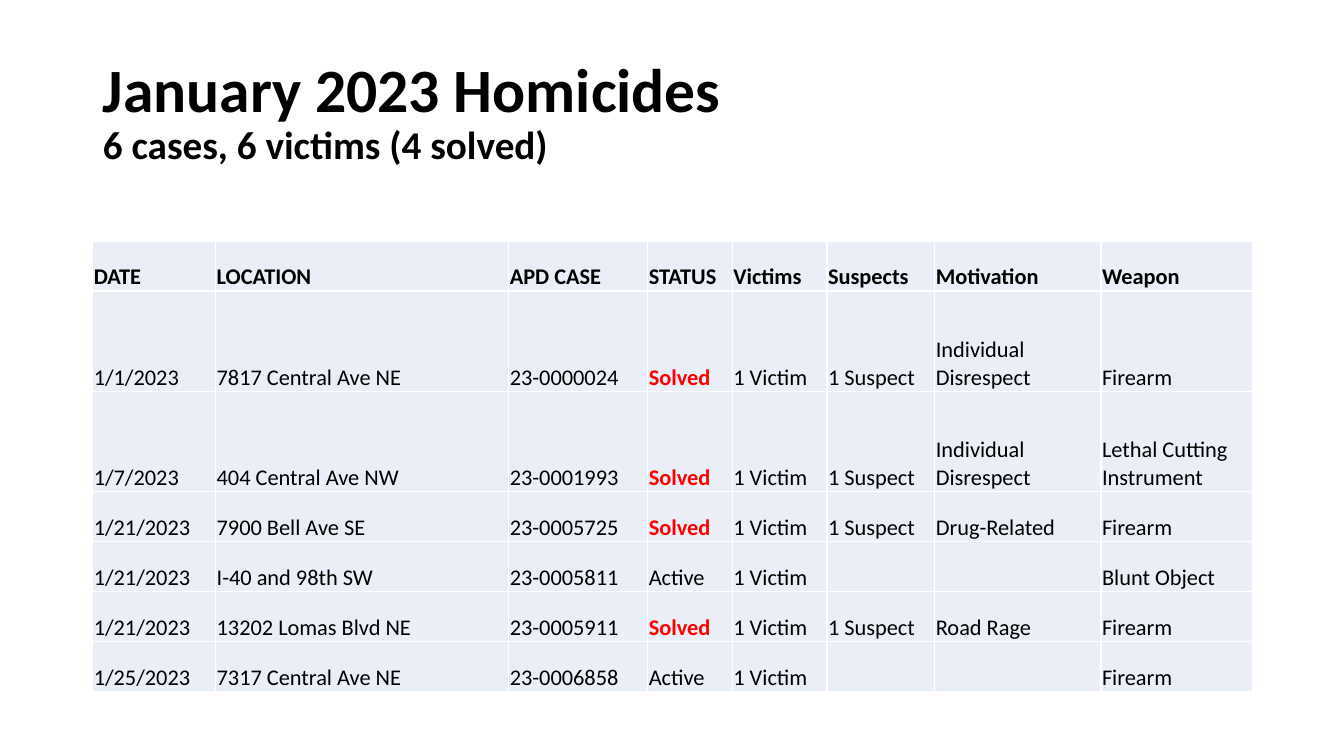
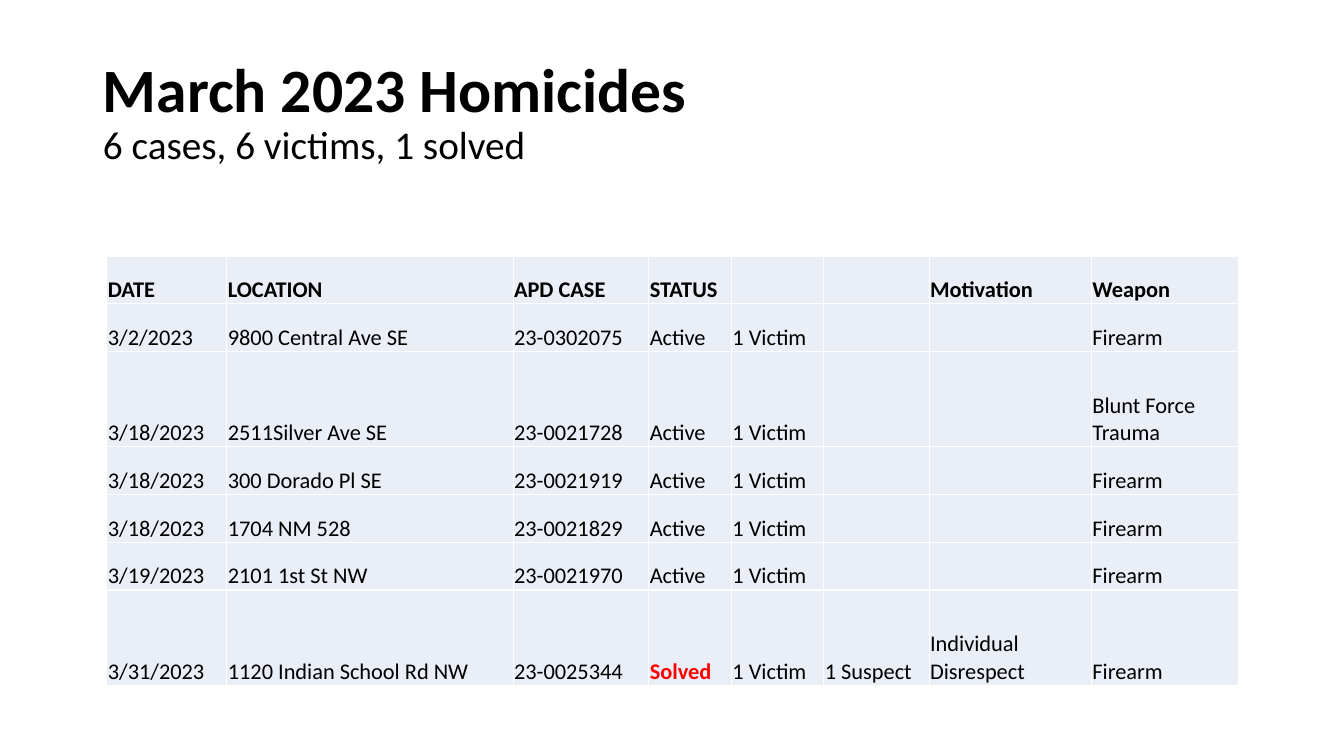
from lxml import etree
from pptx import Presentation
from pptx.dml.color import RGBColor
from pptx.enum.text import MSO_ANCHOR, MSO_AUTO_SIZE, PP_ALIGN
from pptx.oxml.ns import qn
from pptx.util import Inches, Pt

FONT = "Calibri"
BLACK, RED, WHITE, PALE = "000000", "FF0000", "FFFFFF", "EAEFF7"
TITLE_BOX = (0.92, 0.4, 11.5, 1.45)
COLUMN_SHARES = (1.22, 2.91, 1.38, 0.84, 0.94, 1.07, 1.65, 1.5)
STATUS_COLUMN = 3
WRAP_LENGTH = 15

MONTHS = [
    {
        "title": "January 2023 Homicides",
        "summary": "6 cases, 6 victims (4 solved)",
        "summary_bold": True,
        "box": (0.92, 2.39, 11.5, 4.47),
        "rows": [
            ("DATE", "LOCATION", "APD CASE", "STATUS", "Victims", "Suspects", "Motivation", "Weapon"),
            ("1/1/2023", "7817 Central Ave NE", "23-0000024", "Solved", "1 Victim", "1 Suspect",
             "Individual Disrespect", "Firearm"),
            ("1/7/2023", "404 Central Ave NW", "23-0001993", "Solved", "1 Victim", "1 Suspect",
             "Individual Disrespect", "Lethal Cutting Instrument"),
            ("1/21/2023", "7900 Bell Ave SE", "23-0005725", "Solved", "1 Victim", "1 Suspect",
             "Drug-Related", "Firearm"),
            ("1/21/2023", "I-40 and 98th SW", "23-0005811", "Active", "1 Victim", "", "", "Blunt Object"),
            ("1/21/2023", "13202 Lomas Blvd NE", "23-0005911", "Solved", "1 Victim", "1 Suspect",
             "Road Rage", "Firearm"),
            ("1/25/2023", "7317 Central Ave NE", "23-0006858", "Active", "1 Victim", "", "", "Firearm"),
        ],
    },
    {
        "title": "March 2023 Homicides",
        "summary": "6 cases, 6 victims, 1 solved",
        "summary_bold": False,
        "box": (1.06, 2.54, 11.23, 4.26),
        "rows": [
            ("DATE", "LOCATION", "APD CASE", "STATUS", "", "", "Motivation", "Weapon"),
            ("3/2/2023", "9800 Central Ave SE", "23-0302075", "Active", "1 Victim", "", "", "Firearm"),
            ("3/18/2023", "2511Silver Ave SE", "23-0021728", "Active", "1 Victim", "", "", "Blunt Force Trauma"),
            ("3/18/2023", "300 Dorado Pl SE", "23-0021919", "Active", "1 Victim", "", "", "Firearm"),
            ("3/18/2023", "1704 NM 528", "23-0021829", "Active", "1 Victim", "", "", "Firearm"),
            ("3/19/2023", "2101 1st St NW", "23-0021970", "Active", "1 Victim", "", "", "Firearm"),
            ("3/31/2023", "1120 Indian School Rd NW", "23-0025344", "Solved", "1 Victim", "1 Suspect",
             "Individual Disrespect", "Firearm"),
        ],
    },
]


def rgb(value):
    return RGBColor.from_string(value)


def add_run(p, text, size, bold, color=BLACK):
    r = p.add_run()
    r.text = text
    r.font.name = FONT
    r.font.size = Pt(size)
    r.font.bold = bold
    r.font.color.rgb = rgb(color)


def set_title(slide, month):
    sp = slide.shapes.title
    sp.left, sp.top, sp.width, sp.height = map(Inches, TITLE_BOX)
    tf = sp.text_frame
    tf.word_wrap = True
    tf.auto_size = MSO_AUTO_SIZE.NONE
    tf.vertical_anchor = MSO_ANCHOR.MIDDLE
    p = tf.paragraphs[0]
    p.alignment = PP_ALIGN.LEFT
    p.line_spacing = 0.9
    add_run(p, month["title"], 44, True)
    p.add_line_break()
    add_run(p, month["summary"], 28, month["summary_bold"])


def set_borders(cell, color, width):
    tc_pr = cell._tc.get_or_add_tcPr()
    for side in ("lnL", "lnR", "lnT", "lnB"):
        line = etree.SubElement(tc_pr, qn(f"a:{side}"), w=str(Pt(width)))
        fill = etree.SubElement(line, qn("a:solidFill"))
        etree.SubElement(fill, qn("a:srgbClr"), val=color)


def fill_cell(cell, text, bold, color):
    set_borders(cell, WHITE, 1)
    cell.fill.solid()
    cell.fill.fore_color.rgb = rgb(PALE)
    cell.vertical_anchor = MSO_ANCHOR.BOTTOM
    cell.margin_left = cell.margin_right = cell.margin_top = Inches(0.01)
    cell.margin_bottom = 0
    if text:
        add_run(cell.text_frame.paragraphs[0], text, 16, bold, color)


def add_case_table(slide, rows, box):
    left, top, width, height = map(Inches, box)
    table = slide.shapes.add_table(len(rows), len(COLUMN_SHARES), left, top, width, height).table
    table.first_row = table.horz_banding = False
    for column, share in zip(table.columns, COLUMN_SHARES):
        column.width = int(width * share / sum(COLUMN_SHARES))
    units = [2 if max(map(len, row[-2:])) > WRAP_LENGTH else 1 for row in rows]
    for i, row in enumerate(rows):
        table.rows[i].height = int(height * units[i] / sum(units))
        for j, text in enumerate(row):
            solved = j == STATUS_COLUMN and text == "Solved"
            fill_cell(table.cell(i, j), text, i == 0 or solved, RED if solved else BLACK)


def main():
    prs = Presentation()
    prs.slide_width, prs.slide_height = Inches(13.33), Inches(7.5)
    for month in MONTHS:
        slide = prs.slides.add_slide(prs.slide_layouts[5])
        set_title(slide, month)
        add_case_table(slide, month["rows"], month["box"])
    prs.save("out.pptx")


if __name__ == "__main__":
    main()
